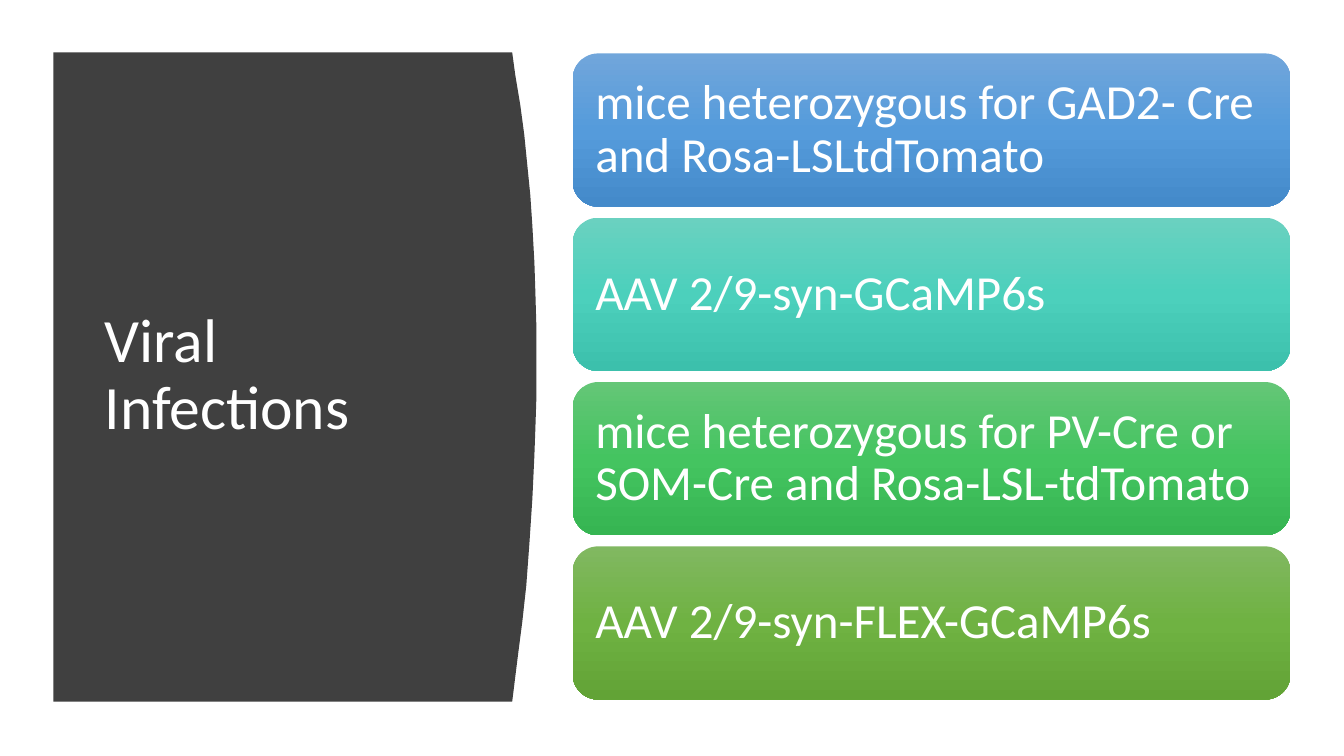
import copy

import pptx
import pptx.dml.color
import pptx.enum.shapes
import pptx.enum.text
import pptx.oxml.ns
import pptx.util

Inches = pptx.util.Inches

# Content
TITLE = "Viral Infections"
CARDS = [
    ("mice heterozygous for GAD2- Cre and Rosa-LSLtdTomato", ("71A6DB", "559BDB", "448ACA")),
    ("AAV 2/9-syn-GCaMP6s", ("6AD1C0", "4CD0BC", "3CC0AC")),
    ("mice heterozygous for PV-Cre or SOM-Cre and Rosa-LSL-tdTomato", ("64C677", "44C460", "36B552")),
    ("AAV 2/9-syn-FLEX-GCaMP6s", ("81B861", "6FB242", "62A336")),
]
WHITE, PANEL = "FFFFFF", "404040"

# Layout in inches
PANEL_LEFT, PANEL_TOP, PANEL_BOTTOM = 0.53, 0.52, 6.96
CURVE = [
    (5.08, 0.52), (5.11, 0.74), (5.16, 1.04), (5.2, 1.34), (5.23, 1.64),
    (5.26, 1.94), (5.28, 2.24), (5.3, 2.6), (5.31, 2.9), (5.32, 3.25),
    (5.32, 3.94), (5.31, 4.25), (5.3, 4.52), (5.28, 4.95), (5.25, 5.4),
    (5.22, 5.81), (5.18, 6.17), (5.14, 6.48), (5.11, 6.72), (5.08, 6.96),
]
CARD_LEFT, CARD_TOP, CARD_W, CARD_H, CARD_GAP = 5.68, 0.53, 7.12, 1.52, 0.11


def rgb(value):
    return pptx.dml.color.RGBColor.from_string(value)


def write(shape, text, size, inset_x, inset_y):
    tf = shape.text_frame
    frame = {
        "word_wrap": True,
        "vertical_anchor": pptx.enum.text.MSO_ANCHOR.MIDDLE,
        "margin_left": Inches(inset_x), "margin_right": Inches(inset_x),
        "margin_top": Inches(inset_y), "margin_bottom": Inches(inset_y),
    }
    for name, value in frame.items():
        setattr(tf, name, value)
    p = tf.paragraphs[0]
    p.alignment = pptx.enum.text.PP_ALIGN.LEFT
    p.line_spacing = 0.9
    r = p.add_run()
    r.text = text
    for name, value in {"name": "Calibri", "size": pptx.util.Pt(size)}.items():
        setattr(r.font, name, value)
    r.font.color.rgb = rgb(WHITE)


def shade(shape, colors):
    """Fill from top to bottom with evenly spaced colours."""
    fill = shape.fill
    fill.gradient()
    fill.gradient_angle = 270
    stops = shape.element.spPr.find(".//" + pptx.oxml.ns.qn("a:gsLst"))
    while len(stops) < len(colors):
        stops.append(copy.deepcopy(stops[0]))
    for i, (stop, color) in enumerate(zip(fill.gradient_stops, colors)):
        stop.position = i / (len(colors) - 1)
        stop.color.rgb = rgb(color)


prs = pptx.Presentation()
prs.slide_width, prs.slide_height = Inches(13.33), Inches(7.5)
s = prs.slides.add_slide(prs.slide_layouts[6])

# Dark panel with a curved right edge
outline = CURVE + [(PANEL_LEFT, PANEL_BOTTOM)]
builder = s.shapes.build_freeform(Inches(PANEL_LEFT), Inches(PANEL_TOP))
builder.add_line_segments([(Inches(x), Inches(y)) for x, y in outline], close=True)
panel = builder.convert_to_shape()
panel.shadow.inherit = False
panel.fill.solid()
panel.fill.fore_color.rgb = rgb(PANEL)
panel.line.fill.background()

# Title
title = s.shapes.add_textbox(Inches(0.94), Inches(1.11), Inches(3.74), Inches(5.24))
write(title, TITLE, 44, 0.1, 0.05)

# Column of cards
for i, (text, colors) in enumerate(CARDS):
    top = CARD_TOP + i * (CARD_H + CARD_GAP)
    card = s.shapes.add_shape(
        pptx.enum.shapes.MSO_SHAPE.ROUNDED_RECTANGLE,
        Inches(CARD_LEFT), Inches(top), Inches(CARD_W), Inches(CARD_H))
    card.shadow.inherit = False
    card.line.fill.background()
    shade(card, colors)
    write(card, text, 35, 0.15, 0.15)

prs.save("out.pptx")
